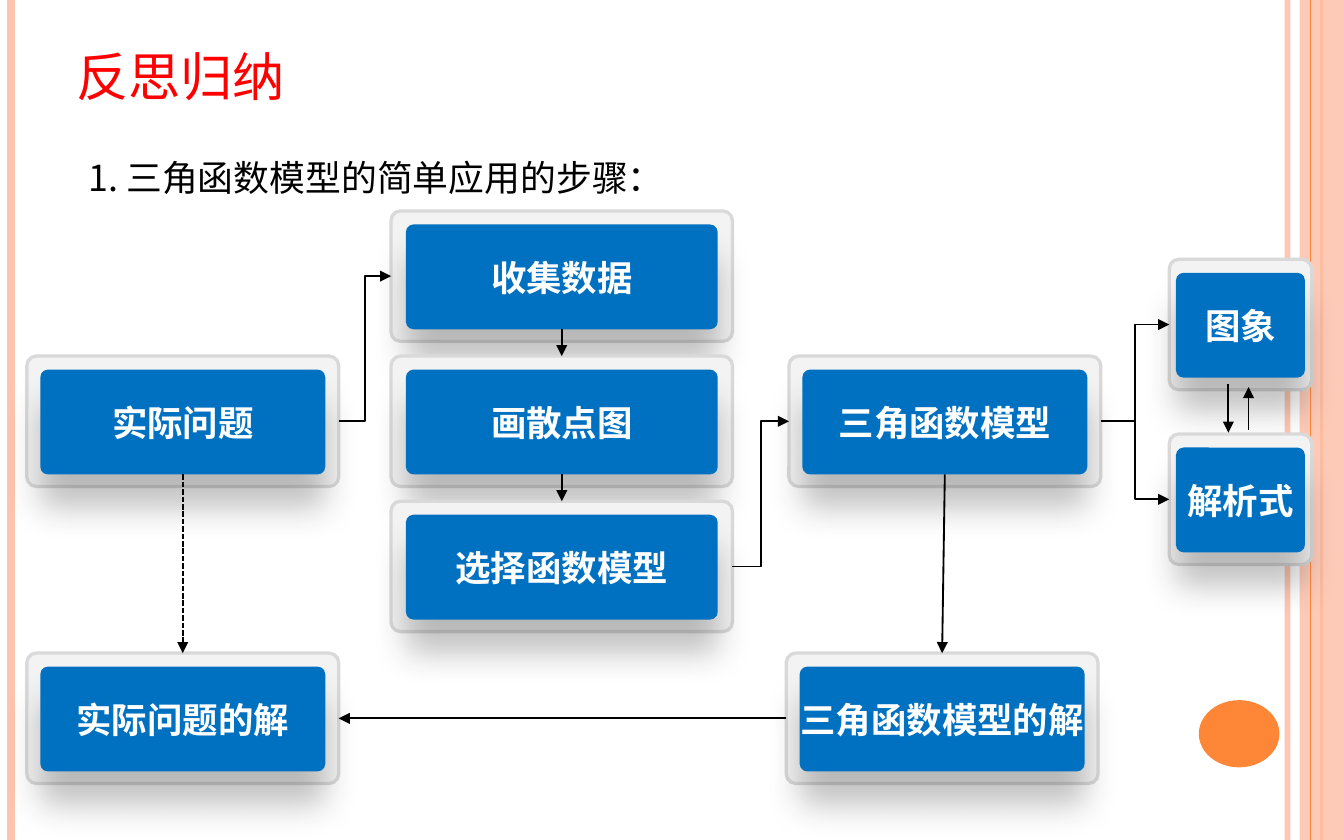
from lxml.etree import SubElement
from pptx import Presentation
from pptx.dml.color import RGBColor
from pptx.enum.dml import MSO_LINE
from pptx.enum.shapes import MSO_CONNECTOR, MSO_SHAPE
from pptx.enum.text import MSO_ANCHOR, PP_ALIGN
from pptx.oxml.ns import qn
from pptx.util import Emu, Pt

PX = 9144  # 100 px to the inch
WIDE, HIGH = 1000, 625
FONT = "Noto Sans CJK SC"
ORANGE, PEACH, BLUE = "FE8637", "FEC3AE", "0070C0"

# Side stripes: x, colour, width in points, opacity in percent
STRIPES = [(958, PEACH, 3, 93), (8, PEACH, 4.5, 100),
           (983, ORANGE, 1.5, 100), (975, ORANGE, 0.75, 100)]

# Headings: text, box, size, colour, small caps
HEADS = [("反思归纳", (47, 28, 177, 57), 28, "FF0000", False),
         ("1. 三角函数模型的简单应用的步骤：", (56, 86, 530, 68), 24, "000000", True)]

# Cards: text, left, top, width, side inset of the face
CARD_H, FACE_H, LIFT = 97, 78, 10
ROW, STEP, LAST = 265, 108, 486
CARDS = {
    "task": ("实际问题", 20, ROW, 232, 10),
    "graph": ("图象", 870, 193, 106, 5),
    "form": ("解析式", 870, 323, 106, 5),
    "root": ("三角函数模型的解", 585, LAST, 232, 10),
    "answer": ("实际问题的解", 20, LAST, 232, 10),
    "model": ("三角函数模型", 587, ROW, 232, 10),
    "data": ("收集数据", 291, ROW - STEP, 254, 11),
    "plot": ("画散点图", 291, ROW, 254, 11),
    "pick": ("选择函数模型", 291, ROW + STEP, 254, 11),
}

# Links by card name; downward ones leave from the face
DOWN = [("model", "root", False), ("task", "answer", True),
        ("data", "plot", False), ("plot", "pick", False)]
BENDS = [("model", "form"), ("model", "graph"), ("task", "data"), ("pick", "model")]
PAIR = [(914, 286, 322), (929, 320, 288)]  # x, from y, to y
TOP, LEFT, BOTTOM, RIGHT = range(4)  # connection sites

deck = Presentation()
deck.slide_width, deck.slide_height = Emu(WIDE * PX), Emu(HIGH * PX)
slide = deck.slides.add_slide(deck.slide_layouts[6])


def px(*nums):
    return [Emu(n * PX) for n in nums]


def hue(code):
    return RGBColor.from_string(code)


def fade(fill, part):
    tint = fill._xPr.find(".//" + qn("a:srgbClr"))
    SubElement(tint, qn("a:alpha"), val=str(part * 1000))


def block(home, kind, box, fill, edge=None):
    item = home.add_shape(kind, *px(*box))
    item.shadow.inherit = False
    item.fill.solid()
    item.fill.fore_color.rgb = hue(fill)
    if edge:
        item.line.color.rgb, item.line.width = hue(edge), Pt(1.75)
    else:
        item.line.fill.background()
    if kind == MSO_SHAPE.ROUNDED_RECTANGLE:
        item.adjustments[0] = 0.073
    return item


def write(para, text, size, color, bold=False):
    run = para.add_run()
    run.text = text
    font = run.font
    font.name, font.size, font.bold = FONT, Pt(size), bold
    font.color.rgb = hue(color)
    SubElement(font._element, qn("a:ea"), typeface=FONT)
    return run


def wire(ends=(0, 0, 0, 0), color="000000", width=1, bent=False, arrow=True):
    kind = MSO_CONNECTOR.ELBOW if bent else MSO_CONNECTOR.STRAIGHT
    line = slide.shapes.add_connector(kind, *px(*ends))
    line.line.color.rgb, line.line.width = hue(color), Pt(width)
    SubElement(line._element.spPr, qn("a:effectLst"))
    if arrow:
        SubElement(line.line._get_or_add_ln(), qn("a:tailEnd"), type="triangle")
    return line


def link(start, out, stop, into, bent=False):
    line = wire(bent=bent)
    line.begin_connect(start, out)
    line.end_connect(stop, into)
    return line


def card(text, left, top, width, inset):
    home = slide.shapes.add_group_shape().shapes
    kind = MSO_SHAPE.ROUNDED_RECTANGLE
    plate = block(home, kind, (left, top, width, CARD_H), "F3F3F3", "D9D9D9")
    box = (left + inset, top + LIFT, width - 2 * inset, FACE_H)
    face = block(home, kind, box, BLUE)
    # Soft shadow straight below the face
    glow = SubElement(face._element.spPr.find(qn("a:effectLst")), qn("a:outerShdw"),
                      blurRad=str(Pt(18)), dist=str(Pt(18)), dir="5400000",
                      algn="ctr", rotWithShape="0")
    tint = SubElement(glow, qn("a:srgbClr"), val="262626")
    SubElement(tint, qn("a:alpha"), val="28000")
    frame = face.text_frame
    frame.word_wrap = False
    frame.margin_left = frame.margin_right = 0
    frame.vertical_anchor = MSO_ANCHOR.MIDDLE
    para = frame.paragraphs[0]
    para.alignment = PP_ALIGN.CENTER
    write(para, text, 19, "FFFFFF", True)
    return plate, face


# Side decoration
for x, color, width, part in STRIPES[:3]:
    fade(wire((x, 0, x, HIGH), color, width, arrow=False).line.fill, part)
band = block(slide.shapes, MSO_SHAPE.RECTANGLE, (967, 0, 33, HIGH), PEACH)
fade(band.fill, 87)
x, color, width, part = STRIPES[3]
wire((x, 0, x, HIGH), color, width, arrow=False)
block(slide.shapes, MSO_SHAPE.OVAL, (892, 521, 60, 50), ORANGE)

# Headings
for text, box, size, color, small in HEADS:
    frame = slide.shapes.add_textbox(*px(*box)).text_frame
    frame.word_wrap = True
    frame.vertical_anchor = MSO_ANCHOR.BOTTOM if small else MSO_ANCHOR.TOP
    run = write(frame.paragraphs[0], text, size, color)
    if small:
        run.font._element.set("cap", "small")

# Cards
made = {name: card(*data) for name, data in CARDS.items()}
plates = {name: pair[0] for name, pair in made.items()}
faces = {name: pair[1] for name, pair in made.items()}

# Links
for start, stop, dash in DOWN:
    line = link(faces[start], BOTTOM, plates[stop], TOP)
    if dash:
        line.line.dash_style = MSO_LINE.SQUARE_DOT
for start, stop in BENDS:
    link(plates[start], RIGHT, plates[stop], LEFT, bent=True)
link(plates["root"], LEFT, plates["answer"], RIGHT)
for x, start, stop in PAIR:
    wire((x, start, x, stop))

deck.save("out.pptx")
